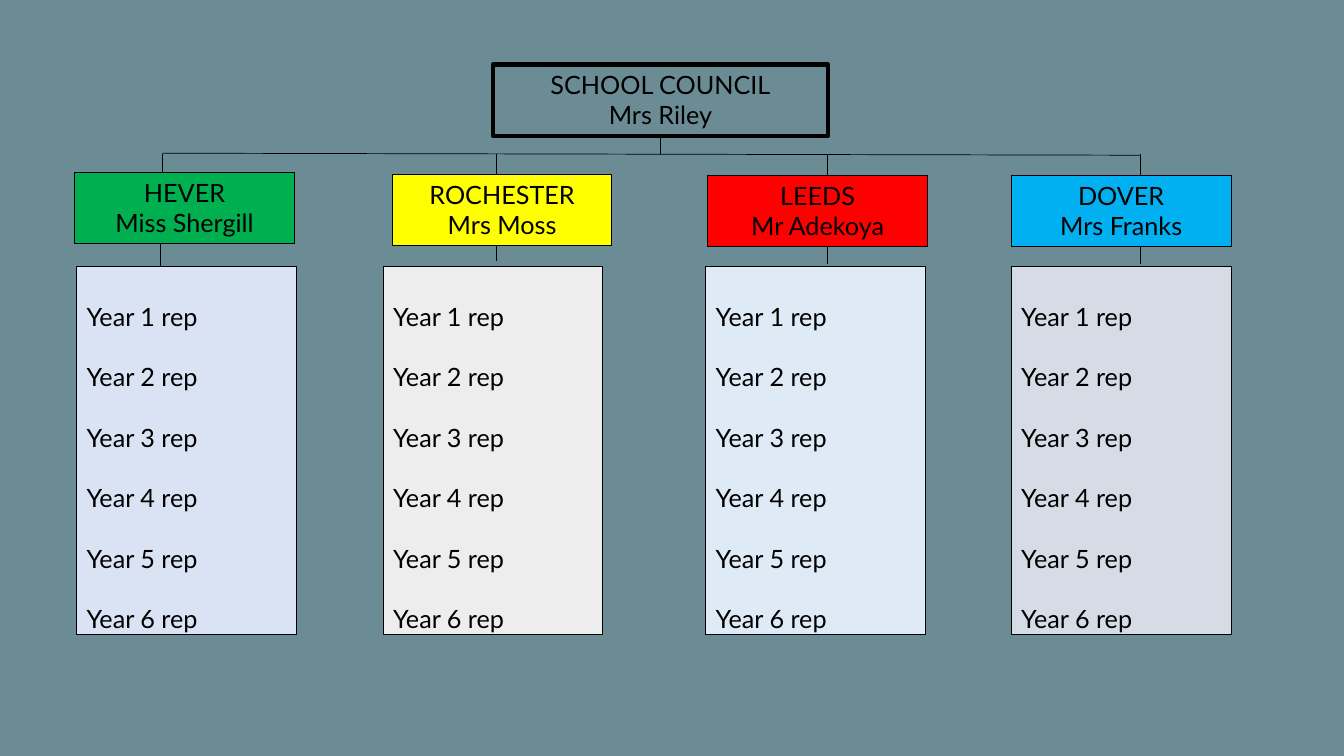
from pptx import Presentation
from pptx.dml.color import RGBColor
from pptx.enum.shapes import MSO_CONNECTOR, MSO_SHAPE
from pptx.enum.text import MSO_ANCHOR, MSO_AUTO_SIZE, PP_ALIGN
from pptx.oxml.ns import qn
from pptx.util import Inches, Pt
from lxml import etree

COLORS = {
    "background": "6B8C94", "black": "000000",
    "green": "00B050", "yellow": "FFFF00", "red": "FF0000", "blue": "00B0F0",
    "lavender": "DAE3F3", "grey": "EDEDED", "ice": "DEEBF7", "slate": "D6DCE5",
}
FONT = "Lato"
HOUSE_WIDTH, HEADER_HEIGHT = 2.18, 0.71
REPS_TOP, REPS_HEIGHT = 2.64, 3.66
BAR_Y, STEM_LENGTH = 1.53, 0.36
REPS = [f"Year {year} rep" for year in range(1, 7)]

# name, lead, header left, header top, header fill, reps left, reps fill,
# upper stem x, lower stem x, lower stem top
HOUSES = [
    ("HEVER", "Miss Shergill", 0.74, 1.71, "green", 0.76, "lavender", 1.61, 1.59, 2.28),
    ("ROCHESTER", "Mrs Moss", 3.89, 1.73, "yellow", 3.8, "grey", 4.92, 4.92, 2.23),
    ("LEEDS", "Mr Adekoya", 7.02, 1.74, "red", 7, "ice", 8.21, 8.21, 2.26),
    ("DOVER", "Mrs Franks", 10.03, 1.74, "blue", 10.03, "slate", 11.31, 11.31, 2.26),
]


def color(name):
    return RGBColor.from_string(COLORS[name])


def add_box(slide, box, fill, lines, align=PP_ALIGN.CENTER, spacing=1, border=0.75):
    shape = slide.shapes.add_shape(MSO_SHAPE.RECTANGLE, *map(Inches, box))
    shape.shadow.inherit = False
    shape.fill.solid()
    shape.fill.fore_color.rgb = color(fill)
    shape.line.color.rgb = color("black")
    shape.line.width = Pt(border)
    frame = shape.text_frame
    frame.word_wrap = True
    frame.auto_size = MSO_AUTO_SIZE.SHAPE_TO_FIT_TEXT
    frame.vertical_anchor = MSO_ANCHOR.TOP
    frame.text = "\n".join(lines)
    for paragraph in frame.paragraphs:
        paragraph.alignment = align
        paragraph.line_spacing = spacing
        for run in paragraph.runs:
            run.font.name = FONT
            run.font.size = Pt(18)
            run.font.color.rgb = color("black")


def add_line(slide, x1, y1, x2, y2):
    line = slide.shapes.add_connector(
        MSO_CONNECTOR.STRAIGHT, *map(Inches, (x1, y1, x2, y2)))
    line.line.color.rgb = color("black")
    line.line.width = Pt(0.5)
    etree.SubElement(line._element.spPr, qn("a:effectLst"))


def add_council(slide, left, top, width, height):
    """Council box, its stem and the bar that joins the houses."""
    add_box(slide, (left, top, width, height), "background",
            ["SCHOOL COUNCIL", "Mrs Riley"], border=3)
    center = left + width / 2
    add_line(slide, center, top + height, center, BAR_Y)
    add_line(slide, HOUSES[0][7], BAR_Y - 0.01, HOUSES[-1][7], BAR_Y + 0.01)


def add_house(slide, name, lead, left, top, fill, reps_left, reps_fill,
              upper_x, lower_x, lower_top):
    """Year representatives, stems, and the header in front of them."""
    add_box(slide, (reps_left, REPS_TOP, HOUSE_WIDTH, REPS_HEIGHT), reps_fill,
            REPS, align=PP_ALIGN.LEFT, spacing=2)
    for x, y in ((upper_x, BAR_Y), (lower_x, lower_top)):
        add_line(slide, x, y, x, y + STEM_LENGTH)
    add_box(slide, (left, top, HOUSE_WIDTH, HEADER_HEIGHT), fill, [name, lead])


def main():
    presentation = Presentation()
    presentation.slide_width = Inches(13.33)
    presentation.slide_height = Inches(7.5)
    slide = presentation.slides.add_slide(presentation.slide_layouts[6])
    slide.background.fill.solid()
    slide.background.fill.fore_color.rgb = color("background")

    add_council(slide, 4.89, 0.64, 3.32, 0.71)
    for house in HOUSES:
        add_house(slide, *house)

    presentation.save("out.pptx")


if __name__ == "__main__":
    main()
